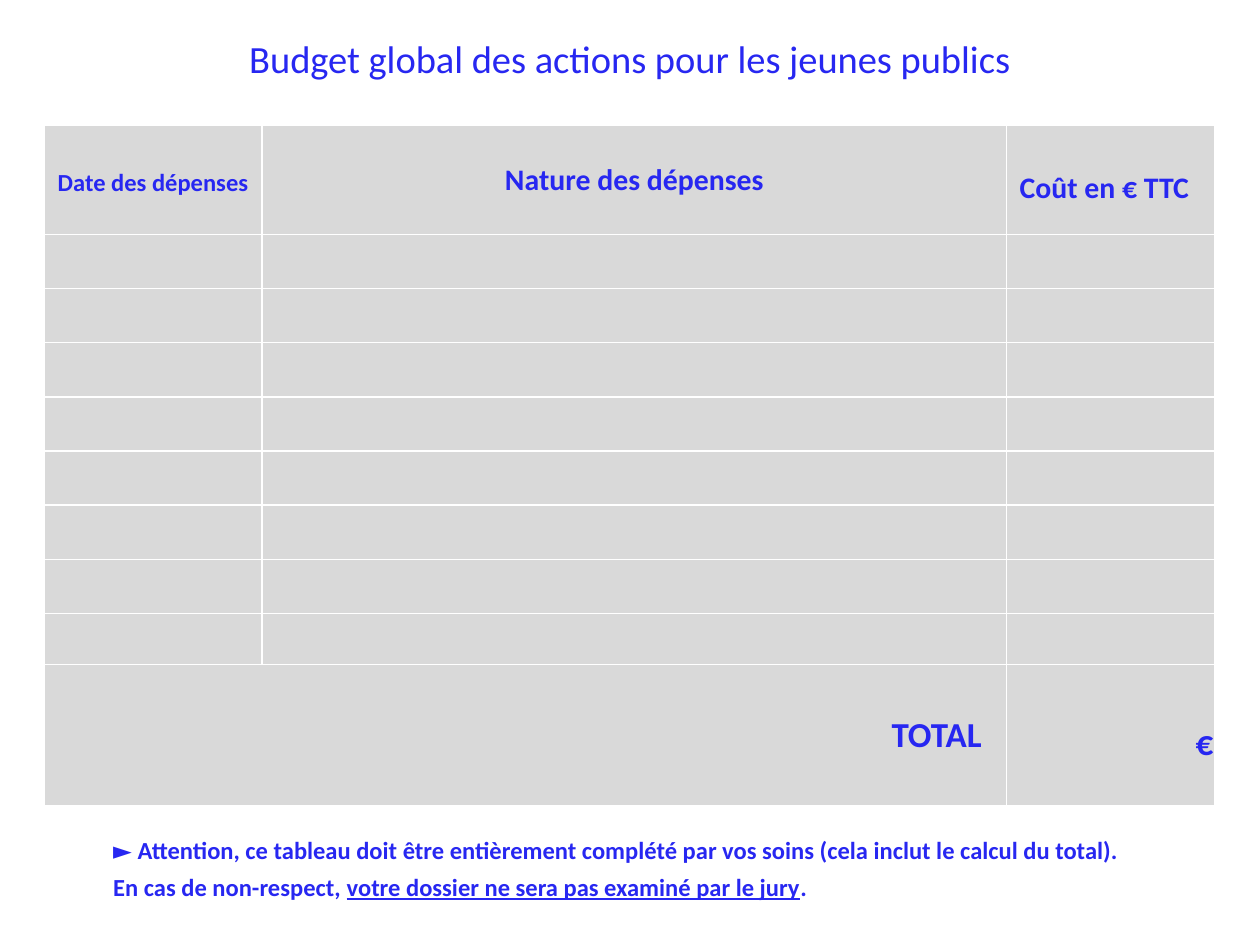
"""Build the slide with the overall budget table for youth activities."""
from lxml.etree import SubElement
from pptx import Presentation
from pptx.dml.color import RGBColor
from pptx.enum.text import MSO_ANCHOR, MSO_AUTO_SIZE, PP_ALIGN
from pptx.oxml.ns import qn
from pptx.util import Inches, Pt

BLUE = RGBColor(0x27, 0x27, 0xF1)
GREY = RGBColor(0xD9, 0xD9, 0xD9)
WHITE = RGBColor(0xFF, 0xFF, 0xFF)

COLUMN_WIDTHS = [1.73, 5.91, 1.65]
ROW_HEIGHTS = [0.87] + [0.43] * 7 + [0.4, 1.12]


def write(para, text, size=14, bold=True, underline=False, align=None):
    span = para.add_run()
    span.text = text
    span.font.name = "Calibri"
    span.font.size = Pt(size)
    span.font.bold = bold
    span.font.underline = underline
    span.font.color.rgb = BLUE
    if align is not None:
        para.alignment = align


class BudgetSlide:
    def __init__(self, deck):
        self.slide = deck.slides.add_slide(deck.slide_layouts[5])

    def title(self, text, left, top, width, height):
        box = self.slide.shapes.title
        box.left, box.top = Inches(left), Inches(top)
        box.width, box.height = Inches(width), Inches(height)
        box.text_frame.vertical_anchor = MSO_ANCHOR.MIDDLE
        write(box.text_frame.paragraphs[0], text, size=22, bold=False, align=PP_ALIGN.CENTER)

    def table(self, left, top, widths, heights):
        frame = self.slide.shapes.add_table(
            len(heights), len(widths), Inches(left), Inches(top),
            Inches(sum(widths)), Inches(sum(heights)))
        table = frame.table
        for column, width in zip(table.columns, widths):
            column.width = Inches(width)
        for row, height in zip(table.rows, heights):
            row.height = Inches(height)
        for cell in table.iter_cells():
            self.border(cell)
            cell.fill.solid()
            cell.fill.fore_color.rgb = GREY
        return table

    def border(self, cell):
        properties = cell._tc.get_or_add_tcPr()
        for side in ("a:lnL", "a:lnR", "a:lnT", "a:lnB"):
            line = SubElement(properties, qn(side), w=str(Pt(1)))
            fill = SubElement(line, qn("a:solidFill"))
            SubElement(fill, qn("a:srgbClr"), val=str(WHITE))

    def label(self, cell, text, size, align=PP_ALIGN.CENTER, top=0.01, right=0.01):
        cell.vertical_anchor = MSO_ANCHOR.MIDDLE
        cell.margin_left, cell.margin_right = Inches(0.01), Inches(right)
        cell.margin_top, cell.margin_bottom = Inches(top), Inches(0)
        write(cell.text_frame.paragraphs[0], text, size=size, align=align)

    def note(self, lines, left, top, width, height):
        box = self.slide.shapes.add_textbox(
            Inches(left), Inches(top), Inches(width), Inches(height))
        frame = box.text_frame
        frame.word_wrap = True
        frame.auto_size = MSO_AUTO_SIZE.SHAPE_TO_FIT_TEXT
        for index, spans in enumerate(lines):
            para = frame.add_paragraph() if index else frame.paragraphs[0]
            para.space_before = Pt(4.2)
            for text, underline in spans:
                write(para, text, underline=underline)


def main():
    deck = Presentation()
    deck.slide_width, deck.slide_height = Inches(10), Inches(7.5)
    page = BudgetSlide(deck)
    page.title("Budget global des actions pour les jeunes publics", 0, 0.03, 10, 0.86)

    table = page.table(0.35, 0.99, COLUMN_WIDTHS, ROW_HEIGHTS)
    page.label(table.cell(0, 0), "Date des dépenses", 14, top=0.05)
    page.label(table.cell(0, 1), "Nature des dépenses", 17)
    page.label(table.cell(0, 2), "Coût en € TTC", 17, top=0.14, right=0.11)
    total = len(ROW_HEIGHTS) - 1
    table.cell(total, 0).merge(table.cell(total, 1))
    page.label(table.cell(total, 0), "TOTAL", 20, PP_ALIGN.RIGHT, right=0.2)
    page.label(table.cell(total, 2), "€", 20, PP_ALIGN.RIGHT, top=0.14)

    page.note([
        [("► Attention, ce tableau doit être entièrement complété par vos soins "
          "(cela inclut le calcul du total).", False)],
        [("En cas de non-respect, ", False),
         ("votre dossier ne sera pas examiné par le jury", True),
         (".", False)],
    ], 0.8, 6.58, 8.39, 0.64)
    deck.save("out.pptx")


if __name__ == "__main__":
    main()
